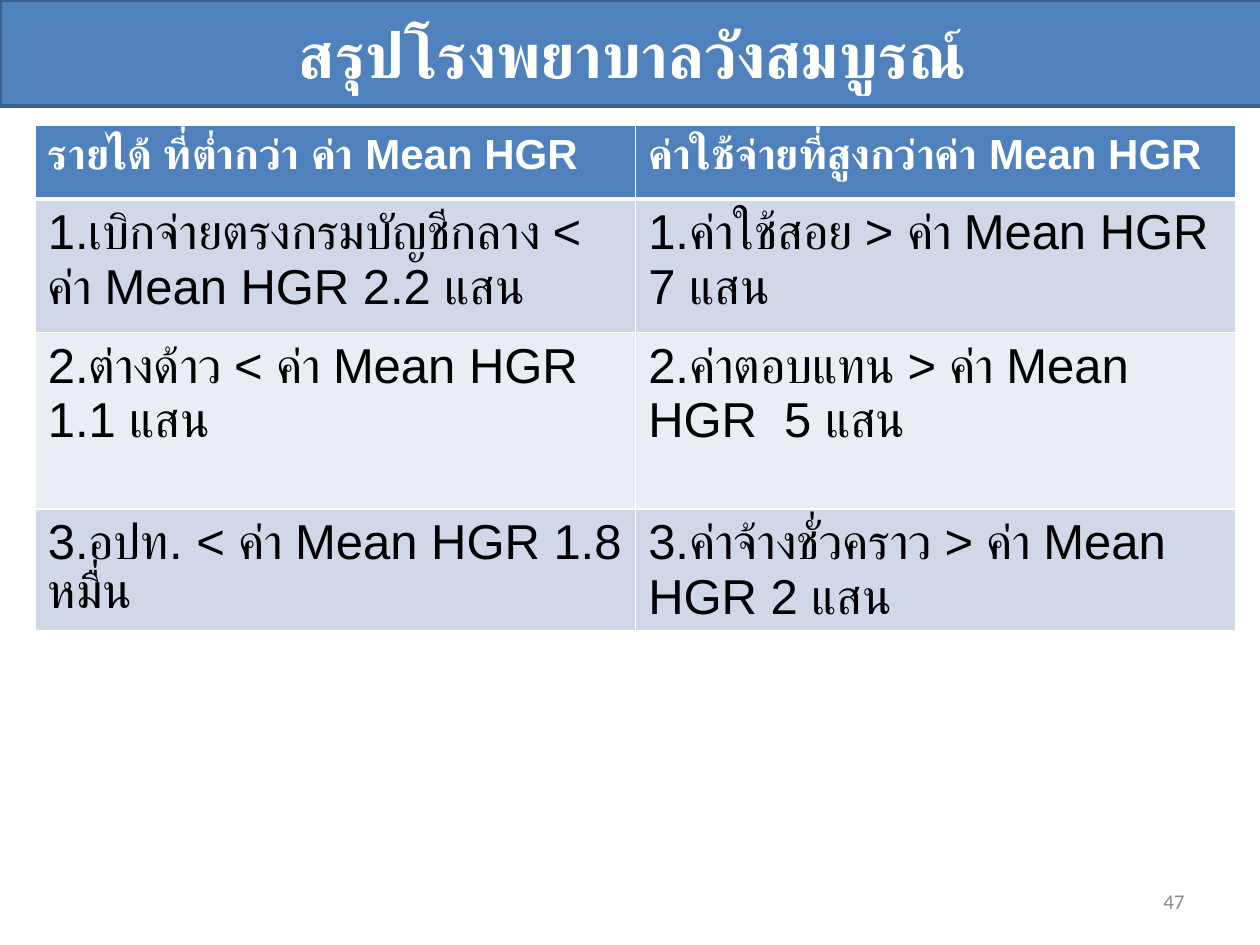
from lxml import etree
from pptx import Presentation
from pptx.dml.color import RGBColor
from pptx.enum import shapes, text
from pptx.oxml import ns
from pptx.util import Inches, Pt

COLORS = {
    "blue": "4F81BD", "outline": "3A5F8C", "white": "FFFFFF", "black": "000000",
    "band_dark": "D0D8E8", "band_light": "E9EDF4", "gray": "8C8C8C",
}
ROWS = [
    ("รายได้ ที่ต่ำกว่า ค่า Mean HGR", "ค่าใช้จ่ายที่สูงกว่าค่า Mean HGR"),
    ("1.เบิกจ่ายตรงกรมบัญชีกลาง < ค่า Mean HGR 2.2 แสน",
     "1.ค่าใช้สอย > ค่า Mean HGR 7 แสน"),
    ("2.ต่างด้าว < ค่า Mean HGR 1.1 แสน", "2.ค่าตอบแทน > ค่า Mean HGR  5 แสน"),
    ("3.อปท. < ค่า Mean HGR 1.8 หมื่น", "3.ค่าจ้างชั่วคราว > ค่า Mean HGR 2 แสน"),
]
ROW_HEIGHTS = [0.59, 1.06, 1.4, 0.95]


def write(frame, words, size, color, bold=False, font="Arial", align=None):
    frame.text = words
    para = frame.paragraphs[0]
    para.alignment = align
    span = para.runs[0].font
    span.name, span.size, span.bold = font, Pt(size), bold
    span.color.rgb = RGBColor.from_string(COLORS[color])


def add_borders(cell, bottom_width):
    """White cell edges, 1 pt except for the bottom one."""
    properties = cell._tc.get_or_add_tcPr()
    widths = {"lnL": 1, "lnR": 1, "lnT": 1, "lnB": bottom_width}
    for position, (edge, width) in enumerate(widths.items()):
        line = etree.Element(ns.qn(f"a:{edge}"), w=str(Pt(width)))
        fill = etree.SubElement(line, ns.qn("a:solidFill"))
        etree.SubElement(fill, ns.qn("a:srgbClr"), val=COLORS["white"])
        properties.insert(position, line)


deck = Presentation()
deck.slide_width, deck.slide_height = Inches(10), Inches(7.5)
page = deck.slides.add_slide(deck.slide_layouts[6])

# Income and expense table
table = page.shapes.add_table(
    len(ROWS), 2, Inches(0.28), Inches(0.99), Inches(9.53), Inches(sum(ROW_HEIGHTS))
).table
for column in table.columns:
    column.width = Inches(9.53 / 2)
for r, (entries, height) in enumerate(zip(ROWS, ROW_HEIGHTS)):
    header = r == 0
    table.rows[r].height = Inches(height)
    band = "blue" if header else "band_dark" if r % 2 else "band_light"
    for c, words in enumerate(entries):
        cell = table.cell(r, c)
        cell.fill.solid()
        cell.fill.fore_color.rgb = RGBColor.from_string(COLORS[band])
        add_borders(cell, 3 if header else 1)
        write(cell.text_frame, words, 24 if header else 28,
              "white" if header else "black", bold=header)

# Title banner
banner = page.shapes.add_shape(
    shapes.MSO_SHAPE.RECTANGLE, 0, 0, Inches(10.04), Inches(0.84))
banner.shadow.inherit = False
banner.fill.solid()
banner.fill.fore_color.rgb = RGBColor.from_string(COLORS["blue"])
banner.line.color.rgb = RGBColor.from_string(COLORS["outline"])
banner.line.width = Pt(2)
banner.text_frame.vertical_anchor = text.MSO_ANCHOR.MIDDLE
write(banner.text_frame, "สรุปโรงพยาบาลวังสมบูรณ์", 36, "white", bold=True,
      align=text.PP_ALIGN.CENTER)

# Page number
number = page.shapes.add_textbox(Inches(7.17), Inches(6.95), Inches(2.33), Inches(0.4))
number.text_frame.word_wrap = True
number.text_frame.vertical_anchor = text.MSO_ANCHOR.MIDDLE
write(number.text_frame, "47", 12, "gray", font="Calibri", align=text.PP_ALIGN.RIGHT)

deck.save("out.pptx")
